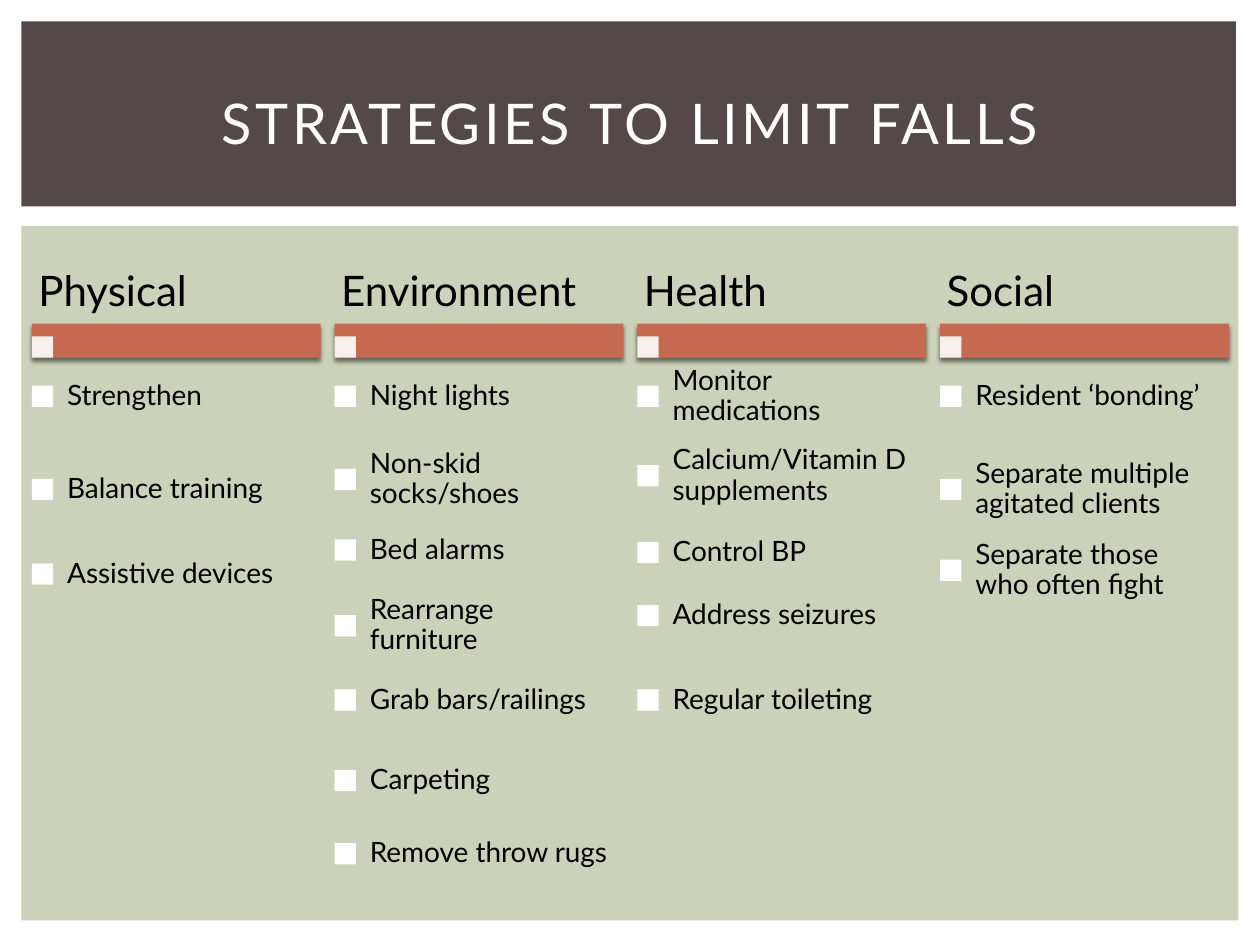
from lxml.etree import SubElement
from pptx import Presentation
from pptx.dml.color import RGBColor
from pptx.enum.shapes import MSO_SHAPE
from pptx.enum.text import MSO_ANCHOR, PP_ALIGN
from pptx.oxml.ns import qn
from pptx.util import Pt

COLOURS = {"white": "FFFFFF", "black": "000000", "banner": "534949",
           "panel": "CCD1B9", "bar": "C66951"}
FONT = "Lato"
COLUMN_PITCH = 173
COLUMNS = [
    ("Physical", [("Strengthen", 62.4), ("Balance training", 115.7),
                  ("Assistive devices", 163.9)]),
    ("Environment", [("Night lights", 62.4), ("Non-skid socks/shoes", 109.9),
                     ("Bed alarms", 150.2), ("Rearrange furniture", 193.5),
                     ("Grab bars/railings", 235.9), ("Carpeting", 282),
                     ("Remove throw rugs", 323.8)]),
    ("Health", [("Monitor medications", 62.4),
                ("Calcium/Vitamin D supplements", 107.8),
                ("Control BP", 151.7), ("Address seizures", 187.7),
                ("Regular toileting", 235.9)]),
    ("Social", [("Resident ‘bonding’", 62.4),
                ("Separate multiple agitated clients", 115.7),
                ("Separate those who often fight", 161.8)]),
]


def add_block(page, left, top, width, height, colour):
    """Add a plain filled rectangle and return it."""
    block = page.shapes.add_shape(MSO_SHAPE.RECTANGLE, Pt(left), Pt(top), Pt(width), Pt(height))
    block.shadow.inherit = False
    block.fill.solid()
    block.fill.fore_color.rgb = RGBColor.from_string(COLOURS[colour])
    block.line.fill.background()
    return block


def add_text(page, left, top, width, height, text, size, colour="black",
             insets=(7.2, 3.6), spacing=0.9, align=PP_ALIGN.LEFT):
    """Add a wrapped, vertically centred text box and return its run."""
    box = page.shapes.add_textbox(Pt(left), Pt(top), Pt(width), Pt(height))
    frame = box.text_frame
    frame.word_wrap = True
    frame.vertical_anchor = MSO_ANCHOR.MIDDLE
    frame.margin_left = frame.margin_right = Pt(insets[0])
    frame.margin_top = frame.margin_bottom = Pt(insets[1])
    para = frame.paragraphs[0]
    para.alignment = align
    para.line_spacing = spacing
    span = para.add_run()
    span.text = text
    span.font.name = FONT
    span.font.size = Pt(size)
    span.font.color.rgb = RGBColor.from_string(COLOURS[colour])
    return span


def add_shadow(block):
    """Give a block a soft black shadow straight below it."""
    effects = block._element.spPr.find(qn("a:effectLst"))
    shadow = SubElement(effects, qn("a:outerShdw"), blurRad=str(Pt(2.5)), dist=str(Pt(2)),
                        dir="5400000", algn="ctr", rotWithShape="0")
    shade = SubElement(shadow, qn("a:srgbClr"), val=COLOURS["black"])
    SubElement(shade, qn("a:alpha"), val="50000")


def add_banner(page, left, top, width, height, title):
    """Draw the dark banner with its letter-spaced title."""
    add_block(page, left, top, width, height, "banner")
    span = add_text(page, left + 18, top + 16, width - 34, 82.8, title, 32, "white",
                    spacing=1, align=PP_ALIGN.CENTER)
    span._r.get_or_add_rPr().set("spc", "200")


def add_column(page, left, top, width, heading, items):
    """Draw one strategy column: heading, bar and square-marked items."""
    marker, indent = 12.2, 11.7
    add_shadow(add_block(page, left, top + 35, width, 19.4, "bar"))
    tab = add_block(page, left, top + 42.2, marker, marker, "white")
    tint = tab._element.spPr.find(qn("a:solidFill"))[0]
    SubElement(tint, qn("a:alpha"), val="90000")
    add_text(page, left, top, width, 34.6, heading, 24, insets=(3.8, 2.5))
    for text, offset in items:
        add_block(page, left, top + offset + 8, marker, marker, "white")
        add_text(page, left + indent, top + offset, width - indent, 28.2, text, 16,
                 insets=(8.5, 8.5))


def add_panel(page, left, top, width, height):
    """Draw the green panel and its row of strategy columns."""
    add_block(page, left, top, width, height, "panel")
    for index, (heading, items) in enumerate(COLUMNS):
        add_column(page, left + 6 + index * COLUMN_PITCH, top + 21, 165, heading, items)


def main():
    """Build and save the one-page deck."""
    deck = Presentation()
    deck.slide_width, deck.slide_height = Pt(720), Pt(540)
    page = deck.slides.add_slide(deck.slide_layouts[6])
    add_panel(page, 12.2, 129, 695.5, 397)
    add_banner(page, 12.2, 12.2, 694, 105.8, "STRATEGIES TO LIMIT FALLS")
    deck.save("out.pptx")


if __name__ == "__main__":
    main()
